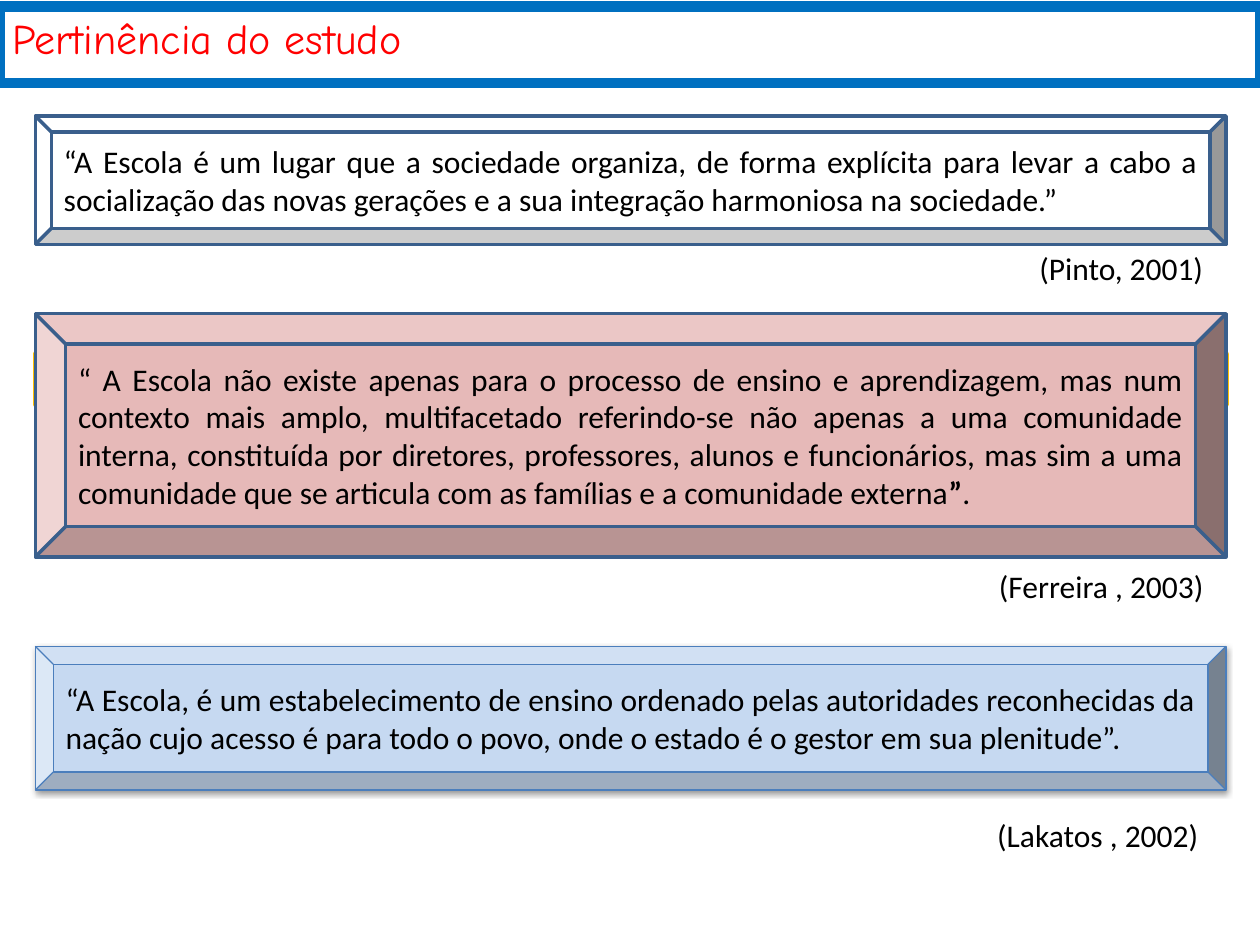
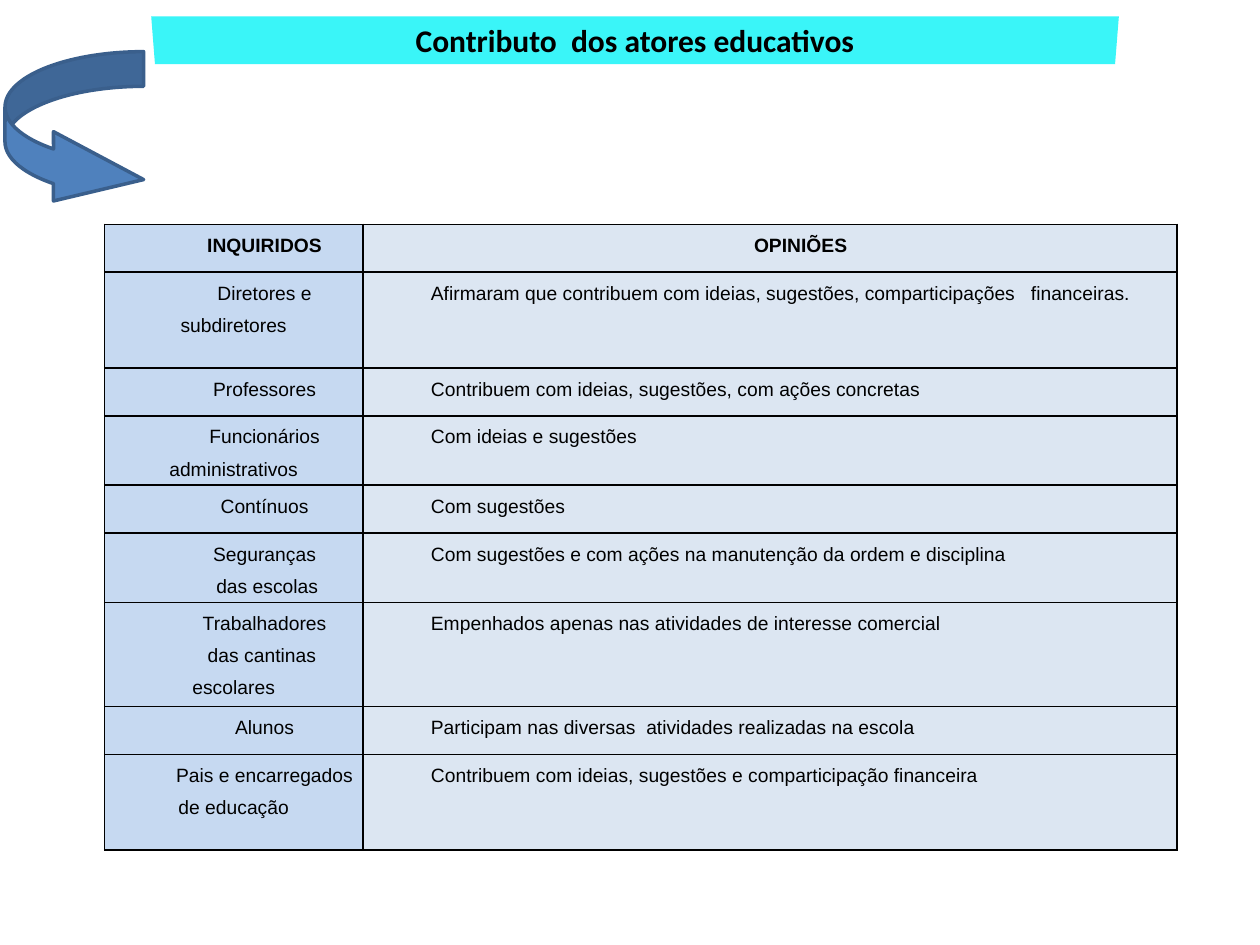
from lxml.etree import SubElement
from pptx import Presentation
from pptx.dml.color import RGBColor
from pptx.enum.shapes import MSO_SHAPE
from pptx.enum.text import MSO_ANCHOR, MSO_AUTO_SIZE, PP_ALIGN
from pptx.oxml.ns import qn
from pptx.util import Inches, Pt

# Shared look
HUES = {
    "black": "000000", "white": "FFFFFF", "red": "FF0000", "frame": "0070C0",
    "cream": "FDEADA", "gold": "FFC000", "rose": "E6B9B8", "sky": "C6D9F1",
    "pale": "DCE6F2", "edge": "3A5F8C", "trim": "4B7EBC", "blue": "4F81BD",
    "cyan": "3AF5F8",
}
HEAD = {"name": "Comic Neue", "size": Pt(24), "bold": False}
BODY = {"name": "Calibri", "size": Pt(18), "bold": False}
BOLD = BODY | {"bold": True}
CELL = {"name": "Arial", "size": Pt(11), "bold": False}

deck = Presentation()
deck.slide_width, deck.slide_height = Inches(10), Inches(7.5)
blank = deck.slide_layouts[6]
COL, ROW = deck.slide_width / 100, deck.slide_height / 100  # 1% of the slide


def write(para, text, font, hue="black", align=PP_ALIGN.LEFT):
    para.alignment = align
    run = para.add_run()
    run.text = text
    for key, value in font.items():
        setattr(run.font, key, value)
    run.font.color.rgb = RGBColor.from_string(HUES[hue])


def draw(slide, kind, x, y, wide, high, fill, line, width):
    shape = slide.shapes.add_shape(
        kind, int(x * COL), int(y * ROW), int(wide * COL), int(high * ROW))
    shape.shadow.inherit = False
    if fill:
        shape.fill.solid()
        shape.fill.fore_color.rgb = RGBColor.from_string(HUES[fill])
    else:
        shape.fill.background()
    shape.line.color.rgb = RGBColor.from_string(HUES[line])
    shape.line.width = Pt(width)
    shape.text_frame.word_wrap = True
    return shape


# Slide 1: title frame
slide = deck.slides.add_slide(blank)
title = draw(slide, MSO_SHAPE.RECTANGLE, 0, 0.67, 100, 8.13, None, "frame", 6)
title.text_frame.vertical_anchor = MSO_ANCHOR.TOP
write(title.text_frame.paragraphs[0], "Pertinência do estudo", HEAD, "red")

# Strip behind the middle quote
LEFT, WIDE = 2.8, 94.5
draw(slide, MSO_SHAPE.RECTANGLE, LEFT, 37.47, WIDE, 5.33, "cream", "gold", 3)

# Authors
for x, y, wide, name in [
    (81.5, 25.73, 15.8, "(Pinto, 2001)"),
    (78.3, 59.33, 18.4, "(Ferreira , 2003)"),
    (77.6, 85.73, 19.3, " (Lakatos , 2002)"),
]:
    label = slide.shapes.add_textbox(
        int(x * COL), int(y * ROW), int(wide * COL), int(5.33 * ROW))
    label.text_frame.word_wrap = False
    label.text_frame.auto_size = MSO_AUTO_SIZE.SHAPE_TO_FIT_TEXT
    write(label.text_frame.paragraphs[0], name, BODY)

# Quotes, each a list of runs
quotes = [
    (33.2, 25.73, "rose", "edge", 2, [
        ("“ A Escola não existe apenas para o processo de ensino e aprendizagem, "
         "mas num contexto mais amplo, multifacetado referindo-se não apenas a uma "
         "comunidade interna, constituída por diretores, professores, alunos e "
         "funcionários, mas sim a uma comunidade que se articula com as famílias e "
         "a comunidade externa", BODY), ("”", BOLD), (".", BODY)]),
    (12.27, 13.6, "white", "edge", 2, [
        ("“A Escola é um lugar que a sociedade organiza, de forma explícita para "
         "levar a cabo a socialização das novas gerações e a sua integração "
         "harmoniosa na sociedade.”", BODY)]),
    (68.4, 15.2, "sky", "trim", 0.75, [
        ("“A Escola, é um estabelecimento de ensino ordenado pelas autoridades "
         "reconhecidas da nação cujo acesso é para todo o povo, onde o estado é o "
         "gestor em sua plenitude”.", BODY)]),
]
for y, high, fill, line, width, runs in quotes:
    quote = draw(slide, MSO_SHAPE.BEVEL, LEFT, y, WIDE, high, fill, line, width)
    quote.text_frame.vertical_anchor = MSO_ANCHOR.MIDDLE
    for text, font in runs:
        write(quote.text_frame.paragraphs[0], text, font, align=PP_ALIGN.JUSTIFY)

# Soft shadow under the last quote
glow = quote._element.spPr.find(qn("a:effectLst"))
cast = SubElement(glow, qn("a:outerShdw"), blurRad=str(Pt(3.1)),
                  dist=str(Pt(1.6)), dir="5400000", rotWithShape="0")
tint = SubElement(cast, qn("a:srgbClr"), val=HUES["black"])
SubElement(tint, qn("a:alpha"), val="38000")

# Slide 2: tapered title band
slide = deck.slides.add_slide(blank)
points = [(int(x * COL), int(y * ROW)) for x, y in
          [(12, 1.73), (88.8, 1.73), (88.5, 6.8), (12.3, 6.8)]]
pen = slide.shapes.build_freeform(*points[0], scale=1.0)
pen.add_line_segments(points[1:], close=True)
band = pen.convert_to_shape()
band.shadow.inherit = False
band.fill.solid()
band.fill.fore_color.rgb = RGBColor.from_string(HUES["cyan"])
band.line.fill.background()
band.text_frame.word_wrap = True
band.text_frame.vertical_anchor = MSO_ANCHOR.MIDDLE
write(band.text_frame.paragraphs[0], "Contributo  dos atores educativos", BOLD,
      align=PP_ALIGN.CENTER)

# Curved arrow
arrow = draw(slide, MSO_SHAPE.CURVED_RIGHT_ARROW, 0.4, 5.47, 11, 17.2,
             "blue", "edge", 2)
arrow.adjustments[2] = 0.65

# Table: height in units, group, opinion
rows = [
    (1, "INQUIRIDOS", "OPINIÕES"),
    (2, "Diretores e subdiretores",
     "Afirmaram que contribuem com ideias, sugestões, comparticipações   financeiras."),
    (1, "Professores", "Contribuem com ideias, sugestões, com ações concretas"),
    (1, "Funcionários administrativos", "Com ideias e sugestões"),
    (1, "Contínuos", "Com sugestões"),
    (1, "Seguranças\n das escolas",
     "Com sugestões e com ações na manutenção da ordem e disciplina"),
    (2, "Trabalhadores\ndas cantinas  escolares",
     "Empenhados apenas nas atividades de interesse comercial"),
    (1, "Alunos", "Participam nas diversas  atividades realizadas na escola"),
    (2, "Pais e encarregados de educação",
     "Contribuem com ideias, sugestões e comparticipação financeira"),
]
UNIT = 5.07 * ROW
PAD = {"margin_left": Inches(0.05), "margin_right": Inches(0.05),
       "margin_top": 0, "margin_bottom": 0}
units = sum(row[0] for row in rows)
table = slide.shapes.add_table(
    len(rows), 2, int(8.3 * COL), int(23.73 * ROW), int(85.1 * COL),
    int(units * UNIT)).table
for col, wide in zip(table.columns, (20.5, 64.6)):
    col.width = int(wide * COL)

for r, (size, *texts) in enumerate(rows):
    table.rows[r].height = int(size * UNIT)
    for c, text in enumerate(texts):
        cell = table.cell(r, c)
        for key, value in PAD.items():
            setattr(cell, key, value)
        # Borders come before the fill in the cell's XML
        props = cell._tc.get_or_add_tcPr()
        for side in ("lnL", "lnR", "lnT", "lnB"):
            rule = SubElement(props, qn(f"a:{side}"), w=str(Pt(1)))
            ink = SubElement(rule, qn("a:solidFill"))
            SubElement(ink, qn("a:srgbClr"), val=HUES["black"])
        cell.fill.solid()
        cell.fill.fore_color.rgb = RGBColor.from_string(HUES[("sky", "pale")[c]])
        font = CELL | {"bold": r == 0}
        align = PP_ALIGN.JUSTIFY if r and c else PP_ALIGN.CENTER
        for n, part in enumerate(text.split("\n")):
            frame = cell.text_frame
            para = frame.add_paragraph() if n else frame.paragraphs[0]
            para.line_spacing = 1.5
            para._p.get_or_add_pPr().set("indent", str(Inches(0.49)))
            write(para, part, font, align=align)

deck.save("out.pptx")
